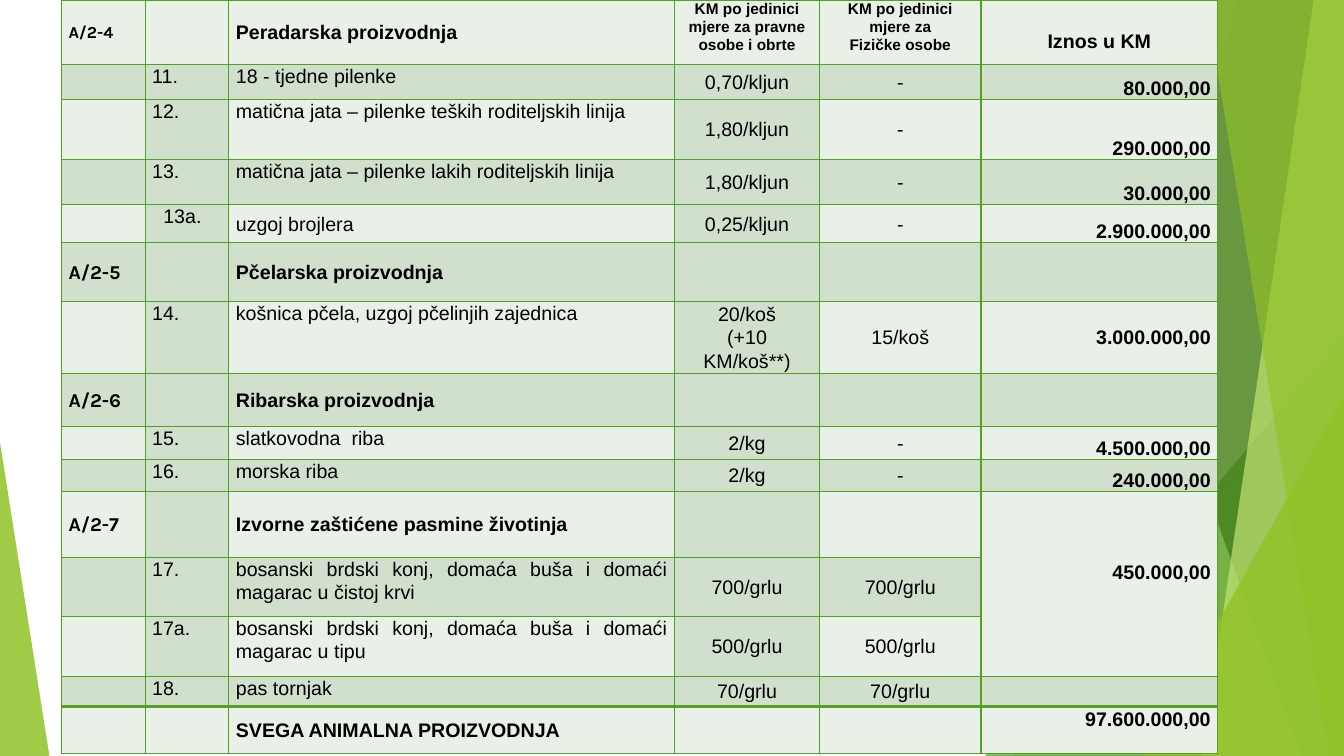
from dataclasses import dataclass

import pptx
import pptx.dml.color
import pptx.enum.shapes
import pptx.enum.text
import pptx.oxml.ns
import pptx.oxml.xmlchemy
import pptx.util
from lxml import etree

Inches = pptx.util.Inches
Pt = pptx.util.Pt
qn = pptx.oxml.ns.qn
ANCHOR = pptx.enum.text.MSO_ANCHOR
ALIGN = pptx.enum.text.PP_ALIGN

COLORS = {
    "text": "000000",
    "border": "54A021",
    "light": "E9F0E8",
    "dark": "D1DFCD",
    "line": "BFBFBF",
    "pale line": "D9D9D9",
    "lime": "90C226",
    "green": "54A021",
    "forest": "3F7819",
    "pale lime": "C0E474",
}


@dataclass(frozen=True)
class Line:
    start: tuple[float, float]
    end: tuple[float, float]
    color: str


@dataclass(frozen=True)
class Facet:
    """A translucent polygon of the background."""
    points: tuple[tuple[float, float], ...]
    color: str
    opacity: int


@dataclass(frozen=True)
class Triangle:
    left: float
    top: float
    width: float
    height: float
    apex: float
    color: str
    opacity: int


@dataclass(frozen=True)
class Row:
    height: float
    texts: tuple[str, str, str, str, str, str]
    heading: bool = False


@dataclass(frozen=True)
class Placement:
    anchor: ANCHOR
    left: float = 0.07
    top: float = 0
    bottom: float = 0


LINES = [
    Line((10.25, 0), (11.58, 7.5), "line"),
    Line((13.33, 4.03), (8.12, 7.5), "pale line"),
]


def band(top_left: float, bottom_left: float, color: str, opacity: int) -> Facet:
    """A facet reaching from a slanted left edge to the slide's right edge."""
    return Facet(((top_left, -0.01), (13.33, -0.01), (13.33, 7.5), (bottom_left, 7.5)), color, opacity)


BACKGROUND = [
    band(12.28, 10.04, "lime", 30),
    band(10.5, 11.83, "lime", 20),
    Triangle(9.77, 3.33, 3.56, 4.17, 1, "green", 72),
    band(10.21, 12.91, "forest", 70),
    band(13.03, 11.92, "pale lime", 70),
    band(11.96, 13.18, "lime", 65),
    Triangle(11.34, 3.93, 1.99, 3.57, 1, "lime", 80),
    Triangle(0, 4.39, 0.49, 3.11, 0, "lime", 85),
]

COLUMN_WIDTHS = [0.83, 0.83, 4.42, 1.44, 1.6, 2.35]
ROWS = [
    Row(0.64, ("A/2-4", "", "Peradarska proizvodnja", "KM po jedinici mjere za pravne osobe i obrte",
               "KM po jedinici mjere za\nFizičke osobe", "Iznos u KM"), True),
    Row(0.35, ("", "11.", "18 - tjedne pilenke", "0,70/kljun", "-", "80.000,00")),
    Row(0.59, ("", "12.", "matična jata – pilenke teških roditeljskih linija", "1,80/kljun", "-", "290.000,00")),
    Row(0.45, ("", "13.", "matična jata – pilenke lakih roditeljskih linija", "1,80/kljun", "-", "30.000,00")),
    Row(0.38, ("", "13a.", "uzgoj brojlera", "0,25/kljun", "-", "2.900.000,00")),
    Row(0.58, ("A/2-5", "", "Pčelarska proizvodnja", "", "", ""), True),
    Row(0.72, ("", "14.", "košnica pčela, uzgoj pčelinjih zajednica", "20/koš\n(+10 KM/koš**)", "15/koš",
               "3.000.000,00")),
    Row(0.52, ("A/2-6", "", "Ribarska proizvodnja", "", "", ""), True),
    Row(0.33, ("", "15.", "slatkovodna  riba", "2/kg", "-", "4.500.000,00")),
    Row(0.32, ("", "16.", "morska riba", "2/kg", "-", "240.000,00")),
    Row(0.65, ("A/2-7", "", "Izvorne zaštićene pasmine životinja", "", "", "450.000,00"), True),
    Row(0.59, ("", "17.", "bosanski brdski konj, domaća buša i domaći magarac u čistoj krvi",
               "700/grlu", "700/grlu", "")),
    Row(0.59, ("", "17a.", "bosanski brdski konj, domaća buša i domaći magarac u tipu",
               "500/grlu", "500/grlu", "")),
    Row(0.3, ("", "18.", "pas tornjak", "70/grlu", "70/grlu", "")),
    Row(0.47, ("", "", "SVEGA ANIMALNA PROIZVODNJA", "", "", "97.600.000,00"), True),
]
LAST_ROW = len(ROWS) - 1
ALIGNMENTS = [ALIGN.JUSTIFY] * 3 + [ALIGN.CENTER] * 2 + [ALIGN.RIGHT]
ANCHORS = [ANCHOR.MIDDLE, ANCHOR.TOP, ANCHOR.TOP, ANCHOR.MIDDLE, ANCHOR.MIDDLE, ANCHOR.BOTTOM]
PLACEMENTS = {
    (0, 3): Placement(ANCHOR.TOP),
    (0, 4): Placement(ANCHOR.TOP),
    (0, 5): Placement(ANCHOR.TOP, top=0.29),
    (4, 1): Placement(ANCHOR.TOP, left=0.18),
    (4, 2): Placement(ANCHOR.MIDDLE),
    (6, 5): Placement(ANCHOR.MIDDLE),
    (10, 5): Placement(ANCHOR.MIDDLE, bottom=0.23),
    (LAST_ROW, 5): Placement(ANCHOR.BOTTOM, bottom=0.23),
}


def rgb(name: str) -> pptx.dml.color.RGBColor:
    return pptx.dml.color.RGBColor.from_string(COLORS[name])


def draw_line(slide, line: Line) -> None:
    connector = slide.shapes.add_connector(
        pptx.enum.shapes.MSO_CONNECTOR.STRAIGHT, *map(Inches, line.start + line.end))
    connector.line.color.rgb = rgb(line.color)
    connector.line.width = Pt(0.75)
    etree.SubElement(connector._element.spPr, qn("a:effectLst"))


def draw_background_shape(slide, item: Facet | Triangle) -> None:
    if isinstance(item, Facet):
        points = [(Inches(x), Inches(y)) for x, y in item.points]
        builder = slide.shapes.build_freeform(*points[0])
        builder.add_line_segments(points[1:], close=True)
        shape = builder.convert_to_shape()
    else:
        shape = slide.shapes.add_shape(
            pptx.enum.shapes.MSO_SHAPE.ISOSCELES_TRIANGLE,
            *map(Inches, (item.left, item.top, item.width, item.height)))
        shape.adjustments[0] = item.apex
    shape.shadow.inherit = False
    shape.line.fill.background()
    shape.fill.solid()
    shape.fill.fore_color.rgb = rgb(item.color)
    color = shape._element.spPr.find(qn("a:solidFill")).find(qn("a:srgbClr"))
    etree.SubElement(color, qn("a:alpha"), val=str(item.opacity * 1000))


def set_borders(cell, top_width: float, bottom_width: float) -> None:
    properties = cell._tc.get_or_add_tcPr()
    widths = {"lnL": 1, "lnR": 1, "lnT": top_width, "lnB": bottom_width}
    for index, (side, width) in enumerate(widths.items()):
        border = etree.Element(qn(f"a:{side}"), w=str(Pt(width)))
        fill = etree.SubElement(border, qn("a:solidFill"))
        etree.SubElement(fill, qn("a:srgbClr"), val=COLORS["border"])
        properties.insert(index, border)


def fill_cell(cell, row: int, column: int) -> None:
    content = ROWS[row]
    dark = row % 2 == 1 or (column in (1, 3) and 0 < row < LAST_ROW)
    cell.fill.solid()
    cell.fill.fore_color.rgb = rgb("dark" if dark else "light")
    set_borders(cell, 2 if row == LAST_ROW else 1, 2 if row == LAST_ROW - 1 else 1)

    anchor = ANCHOR.MIDDLE if content.heading and column == 2 else ANCHORS[column]
    placement = PLACEMENTS.get((row, column), Placement(anchor))
    cell.vertical_anchor = placement.anchor
    cell.margin_left, cell.margin_right = Inches(placement.left), Inches(0.07)
    cell.margin_top, cell.margin_bottom = Inches(placement.top), Inches(placement.bottom)

    size = 14
    if row == 0:
        size = {0: 12, 3: 11, 4: 11}.get(column, 14)
    cell.text_frame.text = content.texts[column]
    for paragraph in cell.text_frame.paragraphs:
        paragraph.alignment = ALIGN.CENTER if row == 0 and column == 5 else ALIGNMENTS[column]
        paragraph.line_spacing = 1.05
        if not paragraph.runs:
            etree.SubElement(paragraph._p, qn("a:endParaRPr"), sz=str(size * 100))
        for run in paragraph.runs:
            run.font.name = "Karla" if column == 0 else "Arial"
            run.font.size = Pt(size)
            run.font.bold = content.heading or column == 5
            run.font.color.rgb = rgb("text")


def draw_table(slide) -> None:
    frame = slide.shapes.add_table(
        len(ROWS), len(COLUMN_WIDTHS), Inches(0.61), Inches(0),
        Inches(sum(COLUMN_WIDTHS)), Inches(sum(row.height for row in ROWS)))
    table = frame.table
    table.first_row = table.horz_banding = False
    for column, width in zip(table.columns, COLUMN_WIDTHS):
        column.width = Inches(width)
    for row, content in enumerate(ROWS):
        table.rows[row].height = Inches(content.height)
        for column in range(len(COLUMN_WIDTHS)):
            fill_cell(table.cell(row, column), row, column)
    table.cell(10, 5).merge(table.cell(12, 5))


def main() -> None:
    presentation = pptx.Presentation()
    presentation.slide_width, presentation.slide_height = Inches(13.33), Inches(7.5)
    slide = presentation.slides.add_slide(presentation.slide_layouts[6])
    for line in LINES:
        draw_line(slide, line)
    for item in BACKGROUND:
        draw_background_shape(slide, item)
    draw_table(slide)
    presentation.save("out.pptx")


if __name__ == "__main__":
    main()
